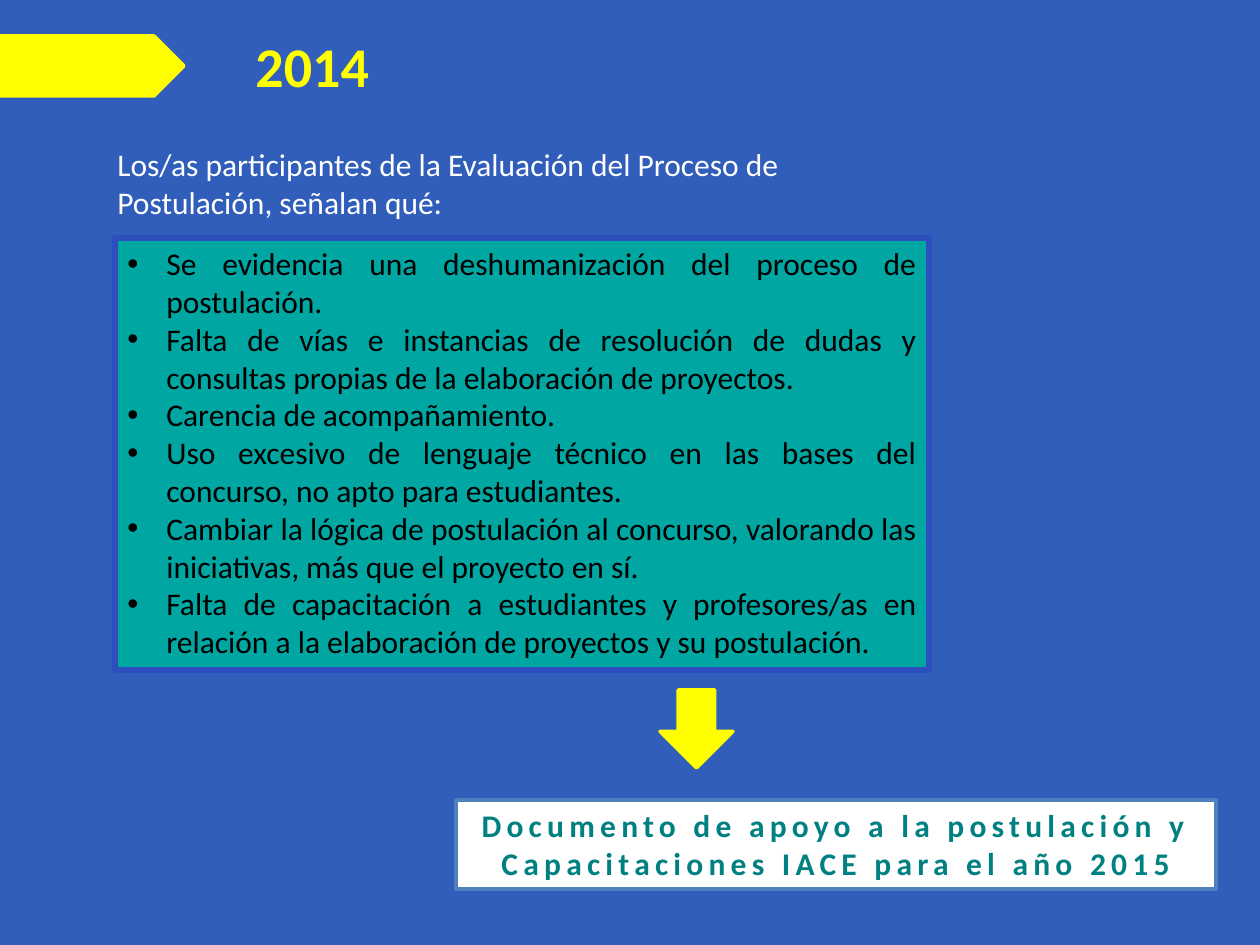
from dataclasses import dataclass
from typing import Optional

from lxml import etree
from pptx import Presentation
from pptx import util as u
from pptx.dml.color import RGBColor
from pptx.enum import shapes, text
from pptx.oxml import ns

SCALE = 914400 / 126  # EMU per px
COLORS = {
    "blue": "305EBA",
    "edge": "2D4FBD",
    "teal": "00A6A2",
    "steel": "4F81BD",
    "green": "008080",
    "yellow": "FFFF00",
    "white": "FFFFFF",
    "black": "000000",
}
KIND = shapes.MSO_SHAPE
ALIGN = text.PP_ALIGN


@dataclass
class Box:
    x: int
    y: int
    w: int
    h: int
    kind: Optional[KIND] = None  # None means a plain text box
    fill: str = ""
    line: str = ""
    width: int = 2


def px(n: int) -> u.Emu:
    return u.Emu(round(n * SCALE))


def rgb(name: str) -> RGBColor:
    return RGBColor.from_string(COLORS[name])


def draw(slide, box: Box):
    """Add a text box or a filled, outlined shape."""
    area = [px(n) for n in (box.x, box.y, box.w, box.h)]
    if box.kind is None:
        return slide.shapes.add_textbox(*area)
    shape = slide.shapes.add_shape(box.kind, *area)
    shape.shadow.inherit = False
    shape.fill.solid()
    shape.fill.fore_color.rgb = rgb(box.fill)
    shape.line.color.rgb = rgb(box.line)
    shape.line.width = u.Pt(box.width)
    return shape


def write(shape, *lines: str, color: str, size: int = 18, bold: bool = False,
          align: ALIGN = ALIGN.LEFT, space: int = 0, indent: int = 0) -> None:
    """Write one paragraph per line; an indent in px adds bullets."""
    frame = shape.text_frame
    frame.word_wrap = True
    frame.auto_size = text.MSO_AUTO_SIZE.SHAPE_TO_FIT_TEXT
    frame.vertical_anchor = text.MSO_ANCHOR.TOP
    for i, line in enumerate(lines):
        para = frame.add_paragraph() if i else frame.paragraphs[0]
        para.alignment = align
        run = para.add_run()
        run.text = line
        font = run.font
        font.name, font.size, font.bold = "Calibri", u.Pt(size), bold
        font.color.rgb = rgb(color)
        if space:
            run._r.get_or_add_rPr().set("spc", str(space * 100))
        if indent:
            props = para._p.get_or_add_pPr()
            props.set("marL", str(px(indent)))
            props.set("indent", str(-px(indent)))
            etree.SubElement(props, ns.qn("a:buFont")).set("typeface", "Arial")
            etree.SubElement(props, ns.qn("a:buChar")).set("char", "•")


def main() -> None:
    deck = Presentation()
    deck.slide_width, deck.slide_height = px(1260), px(945)
    slide = deck.slides.add_slide(deck.slide_layouts[6])
    slide.background.fill.solid()
    slide.background.fill.fore_color.rgb = rgb("blue")

    # Introduction
    intro = draw(slide, Box(105, 139, 741, 89))
    write(intro, "Los/as participantes de la Evaluación del Proceso de "
          "Postulación, señalan qué:", color="white")

    # Findings
    panel = draw(slide, Box(115, 238, 814, 432, KIND.RECTANGLE, "teal", "edge", 3))
    write(
        panel,
        "Se evidencia una deshumanización del proceso de postulación.",
        "Falta de vías e instancias de resolución de dudas y consultas "
        "propias de la elaboración de proyectos.",
        "Carencia de acompañamiento.",
        "Uso excesivo de lenguaje técnico en las bases del concurso, "
        "no apto para estudiantes.",
        "Cambiar la lógica de postulación al concurso, valorando las "
        "iniciativas, más que el proyecto en sí.",
        "Falta de capacitación a estudiantes y profesores/as en relación "
        "a la elaboración de proyectos y su postulación.",
        color="black", align=ALIGN.JUSTIFY, indent=39,
    )

    # Outcome
    result = draw(slide, Box(456, 800, 760, 89, KIND.RECTANGLE, "white", "steel"))
    write(result, "Documento de apoyo a la postulación y Capacitaciones IACE "
          "para el año 2015", color="green", bold=True, align=ALIGN.CENTER, space=3)

    # Year tag and title
    draw(slide, Box(0, 36, 184, 60, KIND.PENTAGON, "yellow", "yellow"))
    year = draw(slide, Box(243, 25, 387, 81))
    write(year, "2014", color="yellow", size=32, bold=True)

    # Arrow to the outcome
    draw(slide, Box(660, 690, 73, 78, KIND.DOWN_ARROW, "yellow", "yellow"))

    deck.save("out.pptx")


if __name__ == "__main__":
    main()
